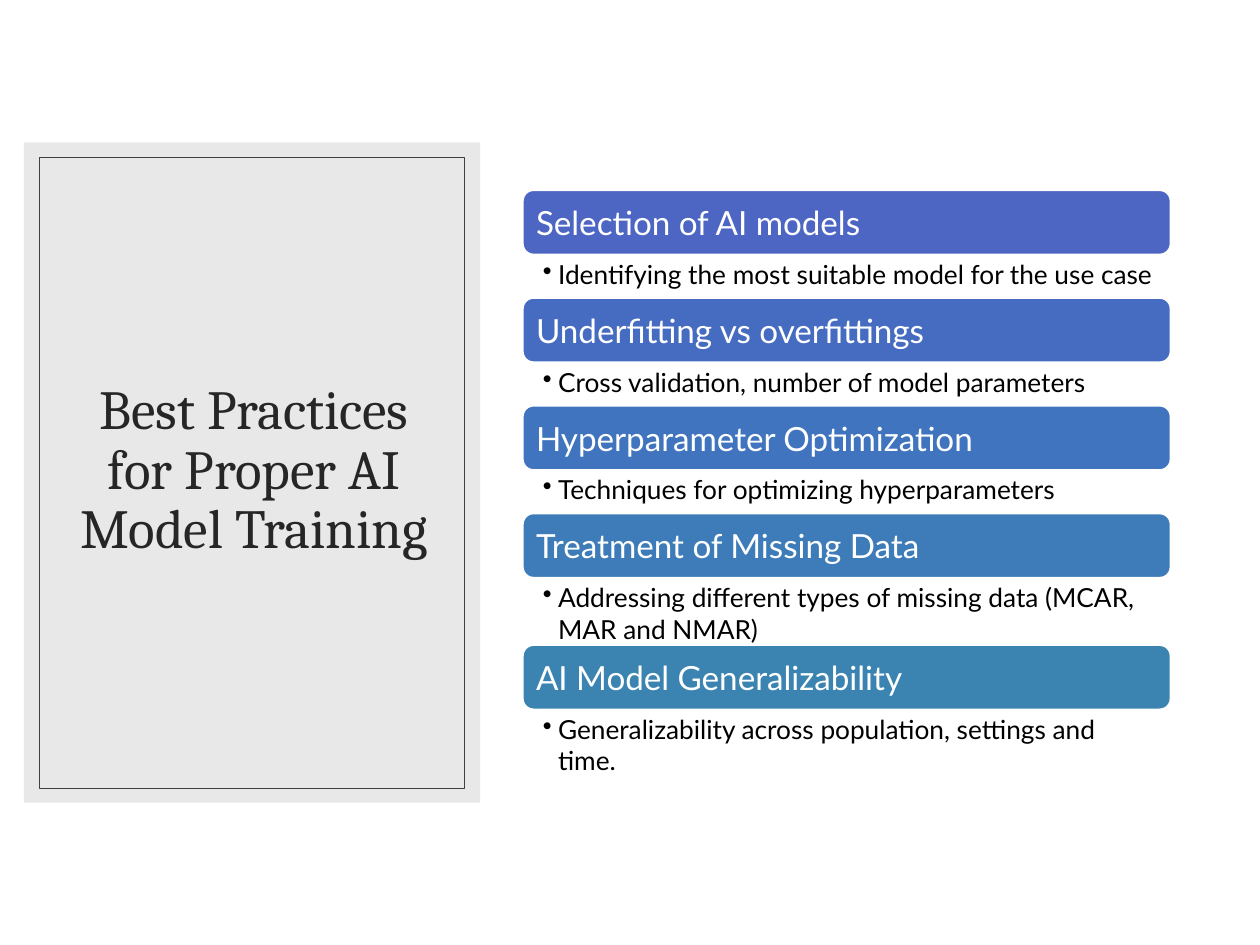
from lxml import etree
from pptx import Presentation
from pptx.dml.color import RGBColor
from pptx.enum.shapes import MSO_SHAPE
from pptx.enum.text import MSO_ANCHOR, PP_ALIGN
from pptx.oxml.ns import qn
from pptx.util import Inches, Pt

RECT, ROUND = MSO_SHAPE.RECTANGLE, MSO_SHAPE.ROUNDED_RECTANGLE
MIDDLE, TOP = MSO_ANCHOR.MIDDLE, MSO_ANCHOR.TOP
LEFT, CENTER = PP_ALIGN.LEFT, PP_ALIGN.CENTER

# Content: heading, detail, bar colour, height and right inset of the detail
TITLE = "Best Practices for Proper AI Model Training"
TOPICS = [
    ("Selection of AI models",
     "Identifying the most suitable model for the use case", "violet", 0.34, 0.03),
    ("Underfitting vs overfittings",
     "Cross validation, number of model parameters", "indigo", 0.34, 0.15),
    ("Hyperparameter Optimization",
     "Techniques for optimizing hyperparameters", "blue", 0.34, 0.15),
    ("Treatment of Missing Data",
     "Addressing different types of missing data (MCAR, MAR and NMAR)",
     "azure", 0.53, 0.15),
    ("AI Model Generalizability",
     "Generalizability across population, settings and time.", "teal", 0.53, 0.15),
]
COLORS = {
    "panel": "D9D9D9", "frame": "404040", "title": "262626",
    "white": "FFFFFF", "black": "000000",
    "violet": "4D65C3", "indigo": "466CC1", "blue": "4074BE",
    "azure": "3D7CB8", "teal": "3B84B1",
}
LIST_X, LIST_Y, LIST_W = 4.15, 1.51, 5.14
BAR_H = 0.51
STEP = 0.51  # from the top of a bar to its detail


def color(name):
    return RGBColor.from_string(COLORS[name])


def add_box(slide, kind, box, fill=None, line=None, width=1):
    shape = slide.shapes.add_shape(kind, *map(Inches, box))
    shape.shadow.inherit = False
    if fill:
        shape.fill.solid()
        shape.fill.fore_color.rgb = color(fill)
    else:
        shape.fill.background()
    if line:
        shape.line.color.rgb = color(line)
        shape.line.width = Pt(width)
    else:
        shape.line.fill.background()
    return shape


def set_text(shape, text, font, size, tint, insets,
             anchor=MIDDLE, align=LEFT, spacing=1.0, bullet=False):
    frame = shape.text_frame
    frame.word_wrap = True
    frame.vertical_anchor = anchor
    (frame.margin_left, frame.margin_top,
     frame.margin_right, frame.margin_bottom) = map(Inches, insets)
    para = frame.paragraphs[0]
    para.text = text
    para.alignment = align
    para.line_spacing = spacing
    if bullet:
        props = para._p.get_or_add_pPr()
        props.set("marL", str(Inches(0.12)))
        props.set("indent", str(-Inches(0.12)))
        etree.SubElement(props, qn("a:buChar")).set("char", "•")
    para.font.name = font
    para.font.size = Pt(size)
    para.font.color.rgb = color(tint)


deck = Presentation()
deck.slide_width, deck.slide_height = Inches(10), Inches(7.5)
slide = deck.slides.add_slide(deck.slide_layouts[6])

# Title panel with its translucent fill and thin frame
panel = add_box(slide, RECT, (0.19, 1.13, 3.62, 5.24), "panel")
tone = panel._element.spPr.find(qn("a:solidFill"))[0]
etree.SubElement(tone, qn("a:alpha")).set("val", "60000")
title = slide.shapes.add_textbox(*map(Inches, (0.47, 1.4, 3.09, 4.68)))
set_text(title, TITLE, "Cambria", 31.5, "title", (0.1, 0.05, 0.1, 0.05),
         align=CENTER, spacing=0.9)
add_box(slide, RECT, (0.31, 1.25, 3.38, 5.01), line="frame", width=0.5)

# Topic bars, each followed by its detail
y = LIST_Y
for head, detail, tint, height, right in TOPICS:
    bar = add_box(slide, ROUND, (LIST_X, y, LIST_W, BAR_H), tint, "white")
    set_text(bar, head, "Lato", 19, "white", (0.08,) * 4)
    y += STEP
    note = slide.shapes.add_textbox(*map(Inches, (LIST_X, y, LIST_W, height)))
    set_text(note, detail, "Lato", 15, "black", (0.16, 0.03, right, 0.03),
             anchor=TOP, bullet=True)
    y += height + 0.005

deck.save("out.pptx")
